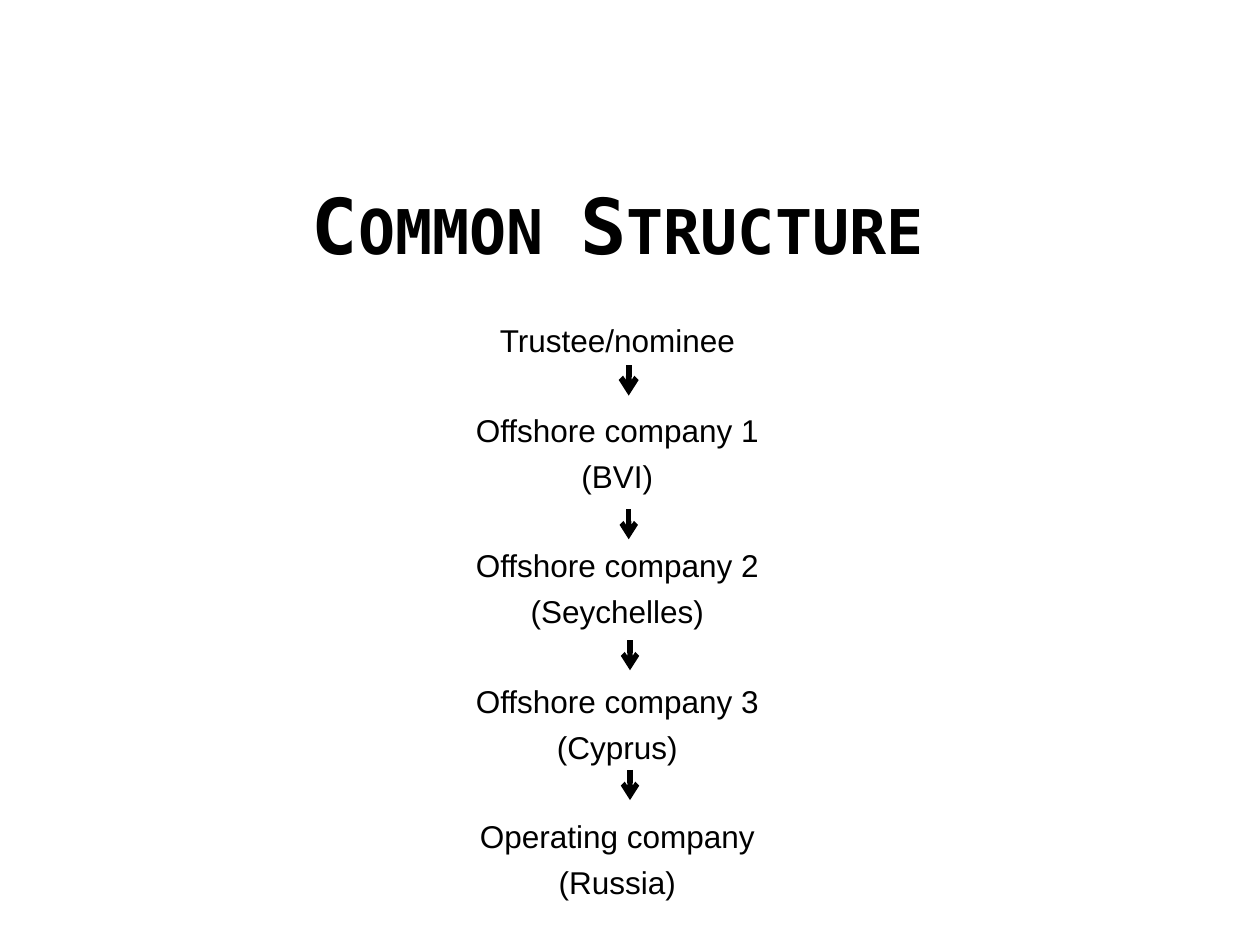
from lxml import etree
from pptx import Presentation
from pptx import util as u
from pptx.dml.color import RGBColor
from pptx.enum import shapes, text
from pptx.oxml.ns import qn

BLACK = RGBColor(0x00, 0x00, 0x00)
HEAD = "DejaVu Sans Mono"
BODY = "Arial"
WIDE, HIGH = 10, 7.5
GAP, PITCH = 4.5, 25.2

GROUPS = [
    ["Trustee/nominee"],
    ["Offshore company 1", "(BVI)"],
    ["Offshore company 2", "(Seychelles)"],
    ["Offshore company 3", "(Cyprus)"],
    ["Operating company", "(Russia)"],
]


class Deck:
    def __init__(self):
        self.prs = Presentation()
        self.prs.slide_width = u.Inches(WIDE)
        self.prs.slide_height = u.Inches(HIGH)
        self.slide = self.prs.slides.add_slide(self.prs.slide_layouts[6])

    def across(self, share):
        return round(self.prs.slide_width * share)

    def down(self, share):
        return round(self.prs.slide_height * share)

    def frame(self, left, top, width, height, anchor):
        box = self.slide.shapes.add_textbox(
            self.across(left), self.down(top), self.across(width), self.down(height))
        frame = box.text_frame
        frame.word_wrap = True
        frame.vertical_anchor = anchor
        return frame

    def style(self, para, face, size, bold=False):
        para.alignment = text.PP_ALIGN.CENTER
        font = para.font
        font.name, font.size, font.bold = face, u.Pt(size), bold
        font.color.rgb = BLACK

    def title(self, words, *place):
        para = self.frame(*place, text.MSO_ANCHOR.MIDDLE).paragraphs[0]
        run = para.add_run()
        run.text = words
        run._r.get_or_add_rPr().set("cap", "small")
        self.style(para, HEAD, 44, True)

    def chain(self, groups, *place):
        frame = self.frame(*place, text.MSO_ANCHOR.TOP)
        for i, group in enumerate(groups):
            for j, words in enumerate(group):
                first = i == j == 0
                para = frame.paragraphs[0] if first else frame.add_paragraph()
                para.text = words
                self.style(para, BODY, 18)
                if not first:
                    para.space_before = u.Pt(GAP if j else GAP + PITCH)

    def arrow(self, x, top, size, weight):
        line = self.slide.shapes.add_connector(
            shapes.MSO_CONNECTOR.STRAIGHT, self.across(x), self.down(top),
            self.across(x), self.down(top + size))
        line.line.color.rgb = BLACK
        line.line.width = u.Pt(weight)
        etree.SubElement(line.line._get_or_add_ln(), qn("a:tailEnd"), type="arrow")
        etree.SubElement(line._element.spPr, qn("a:effectLst"))


def main():
    deck = Deck()
    deck.title("Common Structure", 0.05, 1.15 / HIGH, 0.88, 1.25 / HIGH)
    deck.chain(GROUPS, 0.05, 2.5 / HIGH, 0.88, 4.2 / HIGH)
    for x, top, weight in [(4.99, 2.9, 3.25), (4.99, 4.04, 3), (5, 5.08, 3), (5, 6.11, 3)]:
        deck.arrow(x / WIDE, top / HIGH, 0.24 / HIGH, weight)
    deck.prs.save("out.pptx")


if __name__ == "__main__":
    main()
